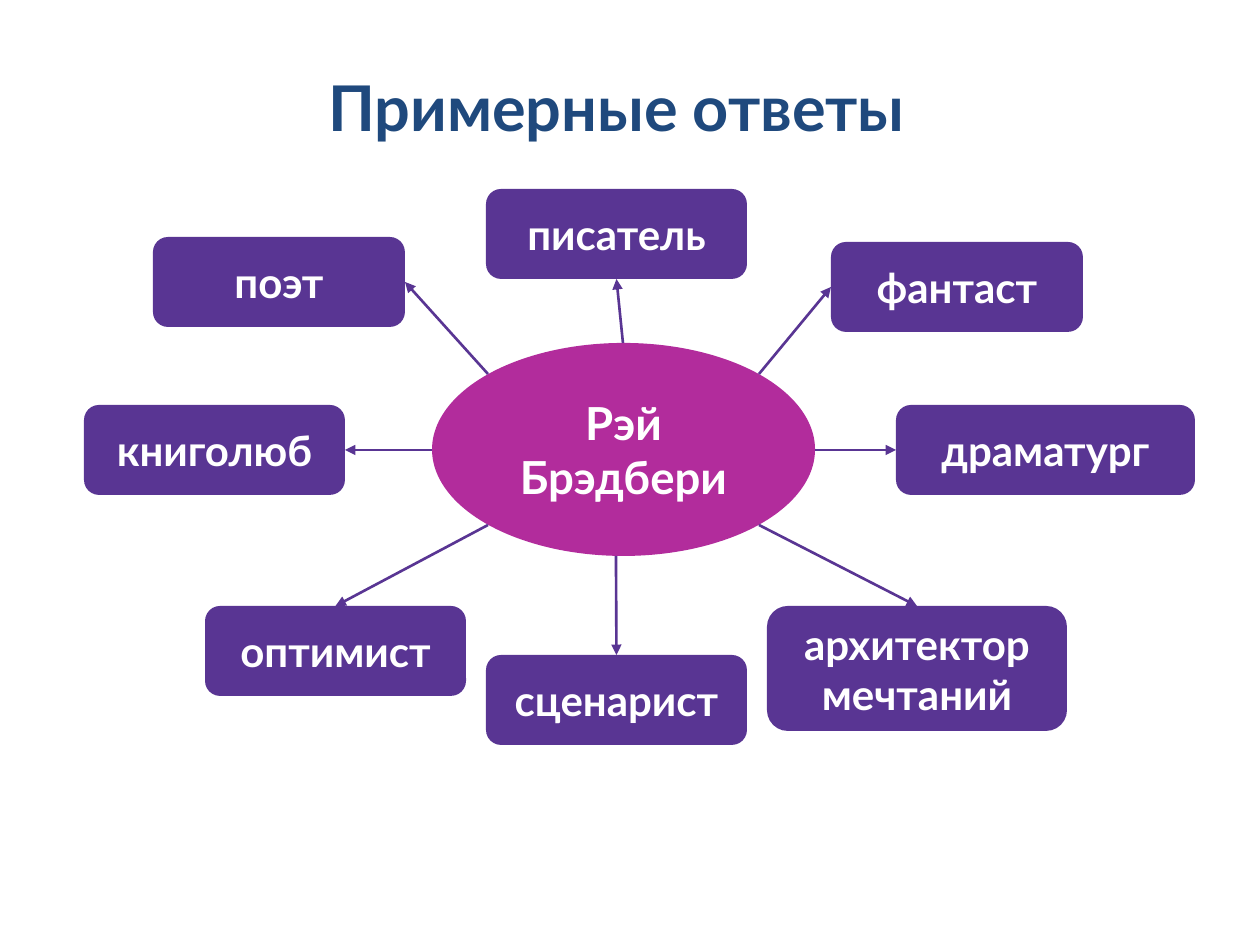
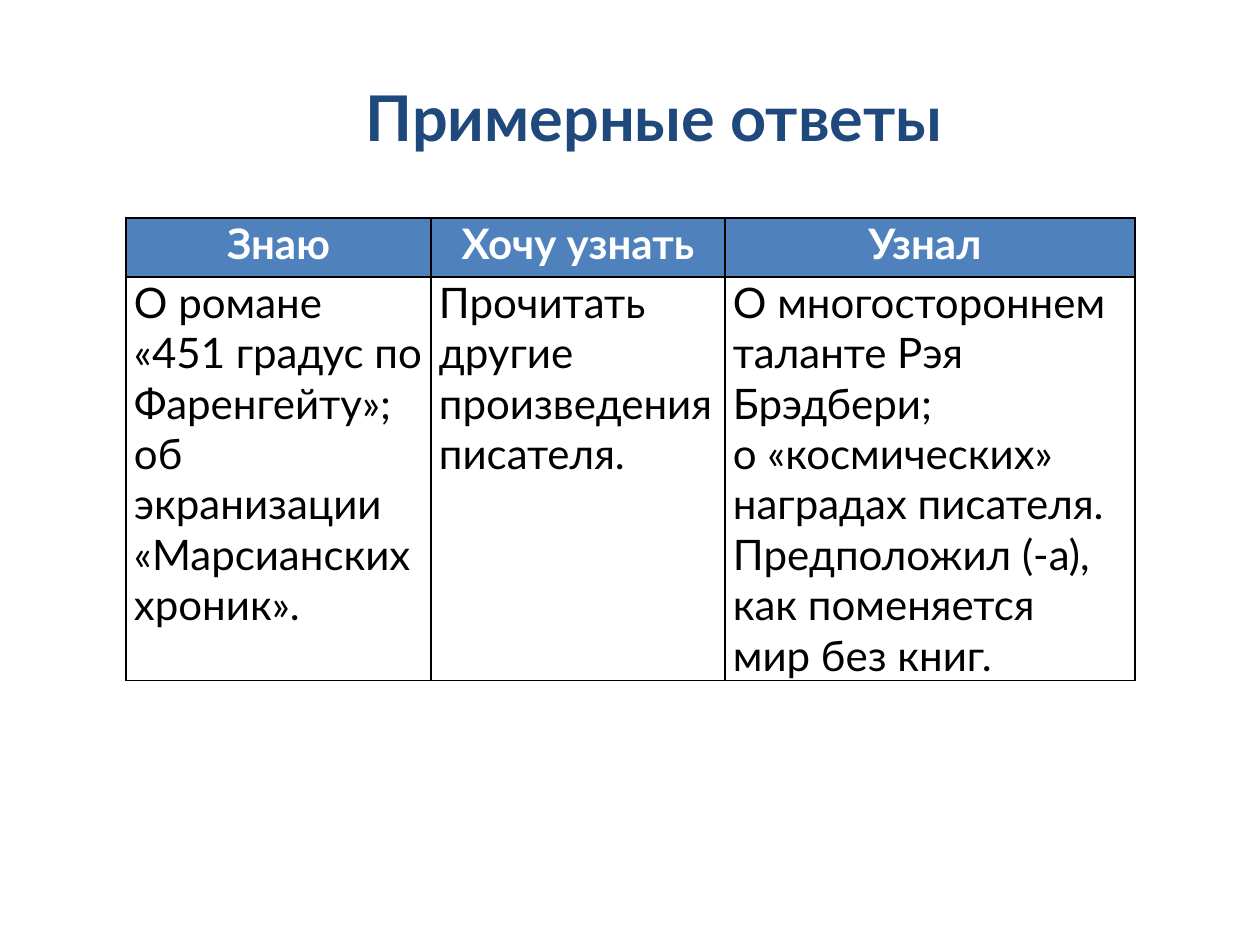
from lxml import etree
from pptx import Presentation
from pptx import util as u
from pptx.dml.color import RGBColor
from pptx.enum import shapes, text
from pptx.oxml.ns import qn

SCALE = 914400 / 126
FONT = "Lato"
NAVY, PURPLE, MAGENTA, BLUE = "1F497D", "593593", "B22C9C", "4F81BD"
WHITE, BLACK = "FFFFFF", "000000"
TOP, LEFT, BOTTOM, RIGHT = range(4)


def px(*lengths):
    return [u.Emu(round(length * SCALE)) for length in lengths]


def style(para, size, color, bold=True, align=text.PP_ALIGN.CENTER):
    para.alignment = align
    para.font.name = FONT
    para.font.size = u.Pt(size)
    para.font.bold = bold
    para.font.color.rgb = RGBColor.from_string(color)


deck = Presentation()
deck.slide_width, deck.slide_height = px(1260, 945)

pages = []
for place in [(248, 62, 737, 91), (292, 72, 724, 91)]:
    page = deck.slides.add_slide(deck.slide_layouts[5])
    title = page.shapes.title
    title.left, title.top, title.width, title.height = px(*place)
    title.text_frame.text = "Примерные ответы"
    title.text_frame.auto_size = text.MSO_AUTO_SIZE.NONE
    title.text_frame.vertical_anchor = text.MSO_ANCHOR.TOP
    style(title.text_frame.paragraphs[0], 36, NAVY)
    pages.append(page)
mind_map, summary = pages

bubbles = [
    ("Рэй Брэдбери", (432, 343, 383, 213), None, None),
    ("оптимист", (205, 606, 261, 90), (488, 525), TOP),
    ("книголюб", (84, 405, 261, 90), (432, 450), RIGHT),
    ("поэт", (153, 237, 252, 90), (488, 374), RIGHT),
    ("фантаст", (831, 242, 252, 90), (759, 374), LEFT),
    ("архитектор мечтаний", (767, 606, 300, 125), (759, 525), TOP),
    ("писатель", (486, 189, 261, 90), (623, 343), BOTTOM),
    ("сценарист", (486, 655, 261, 90), (616, 556), TOP),
    ("драматург", (896, 405, 299, 90), (815, 450), LEFT),
]
for label, place, start, side in bubbles:
    is_center = start is None
    kind = shapes.MSO_SHAPE.OVAL if is_center else shapes.MSO_SHAPE.ROUNDED_RECTANGLE
    box = mind_map.shapes.add_shape(kind, *px(*place))
    box.shadow.inherit = False
    box.fill.solid()
    box.fill.fore_color.rgb = RGBColor.from_string(MAGENTA if is_center else PURPLE)
    box.line.fill.background()
    box.text_frame.word_wrap = True
    box.text_frame.vertical_anchor = text.MSO_ANCHOR.MIDDLE
    box.text_frame.text = label
    style(box.text_frame.paragraphs[0], 26 if is_center else 24, WHITE)
    if is_center:
        continue

    arrow = mind_map.shapes.add_connector(shapes.MSO_CONNECTOR.STRAIGHT, *px(*start, *start))
    arrow.end_connect(box, side)
    arrow.line.color.rgb = RGBColor.from_string(PURPLE)
    arrow.line.width = u.Pt(1.5)
    etree.SubElement(arrow.line._get_or_add_ln(), qn("a:tailEnd"), type="triangle")
    etree.SubElement(arrow._element.spPr, qn("a:effectLst"))

columns = [
    (305, "Знаю", ["О романе", "«451 градус по Фаренгейту»; об экранизации «Марсианских хроник»."]),
    (294, "Хочу узнать", ["Прочитать другие произведения писателя."]),
    (410, "Узнал ", [
        "О многостороннем таланте Рэя Брэдбери;",
        "о «космических» наградах писателя.",
        "Предположил (-а),",
        "как поменяется",
        "мир без книг.",
    ]),
]
table = summary.shapes.add_table(2, 3, *px(126, 218, 1009, 462)).table
table.rows[0].height, table.rows[1].height = px(59, 403)
for index, (width, heading, answers) in enumerate(columns):
    table.columns[index].width = px(width)[0]
    for row, lines in enumerate([[heading], answers]):
        is_heading = row == 0
        cell = table.cell(row, index)
        cell.margin_left, cell.margin_right, cell.margin_top, cell.margin_bottom = px(8, 8, 0, 0)
        cell.text_frame.text = "\n".join(lines)
        for para in cell.text_frame.paragraphs:
            if is_heading:
                style(para, 24, WHITE)
            else:
                style(para, 24, BLACK, bold=False, align=text.PP_ALIGN.LEFT)
        properties = cell._tc.get_or_add_tcPr()
        for edge in ("a:lnL", "a:lnR", "a:lnT", "a:lnB"):
            border = etree.SubElement(properties, qn(edge), w=str(u.Pt(1)))
            paint = etree.SubElement(border, qn("a:solidFill"))
            etree.SubElement(paint, qn("a:srgbClr"), val=BLACK)
        if is_heading:
            cell.fill.solid()
            cell.fill.fore_color.rgb = RGBColor.from_string(BLUE)
        else:
            cell.fill.background()

deck.save("out.pptx")
